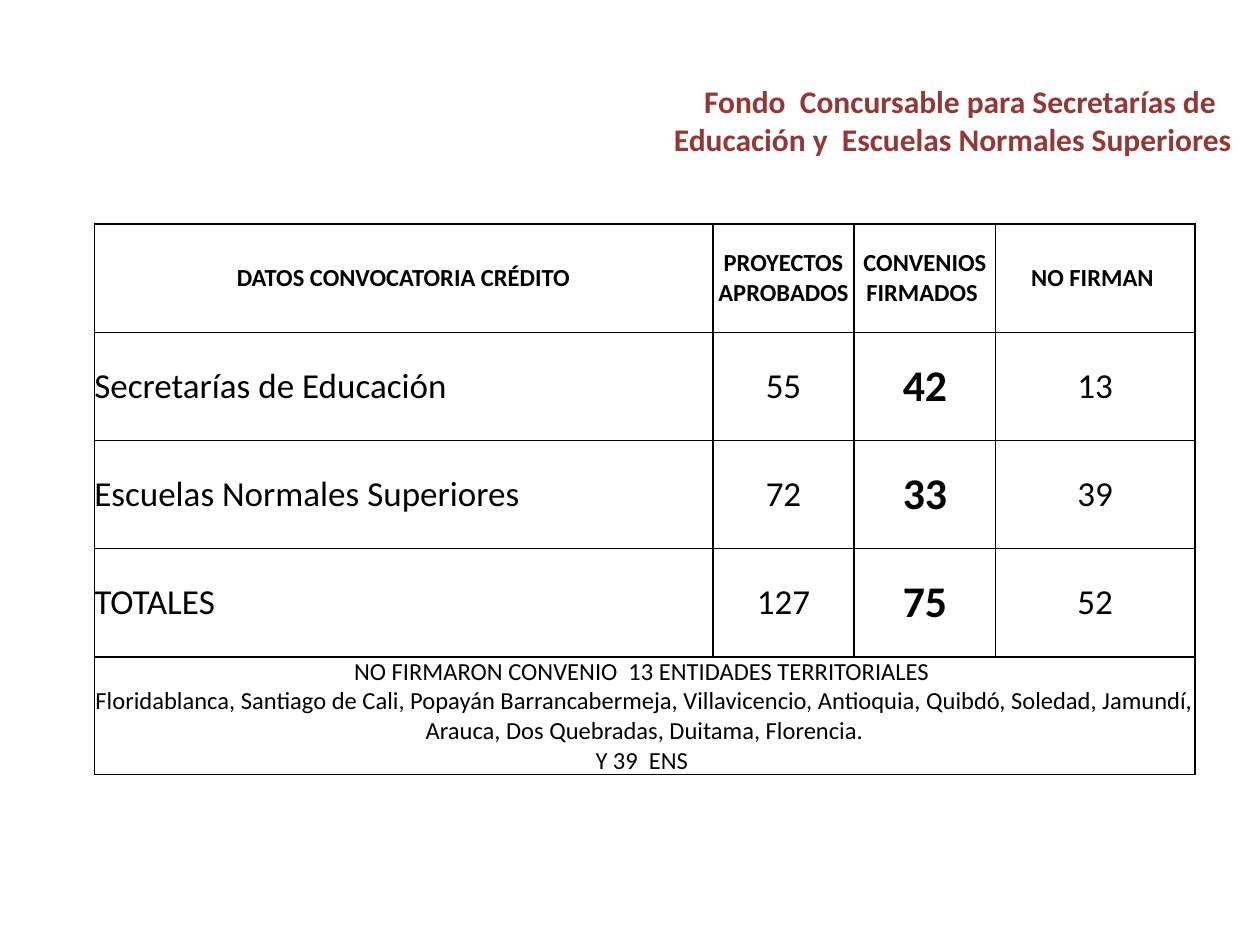
import pptx
import pptx.dml.color
import pptx.enum.text
import pptx.oxml
import pptx.oxml.ns
import pptx.util
from pptx.enum.text import MSO_ANCHOR, MSO_AUTO_SIZE, PP_ALIGN
from pptx.util import Cm

TITLE = "Fondo  Concursable para Secretarías de Educación y  Escuelas Normales Superiores  "
HEADER = ["DATOS CONVOCATORIA CRÉDITO", "PROYECTOS APROBADOS", "CONVENIOS FIRMADOS ", "NO FIRMAN "]
RESULTS = [
    ["Secretarías de Educación", "55", "42", "13"],
    ["Escuelas Normales Superiores ", "72", "33", "39"],
    ["TOTALES ", "127", "75", "52"],
]
# "\v" is a line break inside the paragraph
NOTE = "\v".join([
    "NO FIRMARON CONVENIO  13 ENTIDADES TERRITORIALES ",
    "Floridablanca, Santiago de Cali, Popayán Barrancabermeja, Villavicencio, Antioquia, "
    "Quibdó, Soledad, Jamundí, Arauca, Dos Quebradas, Duitama, Florencia.",
    "Y 39  ENS ",
])
COLUMN_WIDTHS = [12.47, 2.85, 2.85, 4.02]
ROW_HEIGHTS = [2.18] * 4 + [2.24]
SIGNED_COLUMN = 2

THEME = {
    "font": "Calibri", "title": "953735", "text": "000000", "border": "000000",
    "title_size": 18, "small_size": 14, "body_size": 20, "signed_size": 25, "border_width": 1,
}


def format_text(text_frame, size, color, bold, alignment=PP_ALIGN.CENTER):
    for paragraph in text_frame.paragraphs:
        paragraph.alignment = alignment
        for run in paragraph.runs:
            run.font.name = THEME["font"]
            run.font.size = pptx.util.Pt(size)
            run.font.bold = bold
            run.font.color.rgb = pptx.dml.color.RGBColor.from_string(color)


def add_borders(cell):
    properties = cell._tc.get_or_add_tcPr()
    width = pptx.util.Pt(THEME["border_width"])
    for position, side in enumerate(("lnL", "lnR", "lnT", "lnB")):
        properties.insert(position, pptx.oxml.parse_xml(
            f'<a:{side} {pptx.oxml.ns.nsdecls("a")} w="{width}"><a:solidFill>'
            f'<a:srgbClr val="{THEME["border"]}"/></a:solidFill></a:{side}>'))


def fill_cell(cell, text, size, bold=False, alignment=PP_ALIGN.CENTER):
    cell.text_frame.text = text
    format_text(cell.text_frame, size, THEME["text"], bold, alignment)


def add_title(slide):
    title = slide.shapes.title
    title.left, title.top, title.width, title.height = Cm(13.26), Cm(1.52), Cm(12.19), Cm(1.8)
    text_frame = title.text_frame
    text_frame.text = TITLE
    text_frame.word_wrap = True
    text_frame.auto_size = MSO_AUTO_SIZE.SHAPE_TO_FIT_TEXT
    text_frame.vertical_anchor = MSO_ANCHOR.TOP
    format_text(text_frame, THEME["title_size"], THEME["title"], True)


def add_results_table(slide):
    table = slide.shapes.add_table(
        len(ROW_HEIGHTS), len(COLUMN_WIDTHS), Cm(1.9), Cm(4.52),
        Cm(sum(COLUMN_WIDTHS)), Cm(sum(ROW_HEIGHTS))).table
    table.first_row = table.horz_banding = False
    for column, width in zip(table.columns, COLUMN_WIDTHS):
        column.width = Cm(width)
    for row, height in zip(table.rows, ROW_HEIGHTS):
        row.height = Cm(height)

    for cell in table.iter_cells():
        cell.margin_left = cell.margin_right = cell.margin_top = cell.margin_bottom = 0
        cell.vertical_anchor = MSO_ANCHOR.MIDDLE
        cell.fill.background()
        add_borders(cell)

    for column, heading in enumerate(HEADER):
        fill_cell(table.cell(0, column), heading, THEME["small_size"], bold=True)
    for row, values in enumerate(RESULTS, start=1):
        for column, value in enumerate(values):
            signed = column == SIGNED_COLUMN
            fill_cell(table.cell(row, column), value,
                      THEME["signed_size" if signed else "body_size"], bold=signed,
                      alignment=PP_ALIGN.CENTER if column else PP_ALIGN.JUSTIFY)

    last_row = len(ROW_HEIGHTS) - 1
    note_cell = table.cell(last_row, 0)
    note_cell.merge(table.cell(last_row, len(COLUMN_WIDTHS) - 1))
    fill_cell(note_cell, NOTE, THEME["small_size"])


def main():
    presentation = pptx.Presentation()
    presentation.slide_width, presentation.slide_height = Cm(25.4), Cm(19.05)
    slide = presentation.slides.add_slide(presentation.slide_layouts.get_by_name("Title Only"))
    add_title(slide)
    add_results_table(slide)
    presentation.save("out.pptx")


if __name__ == "__main__":
    main()
